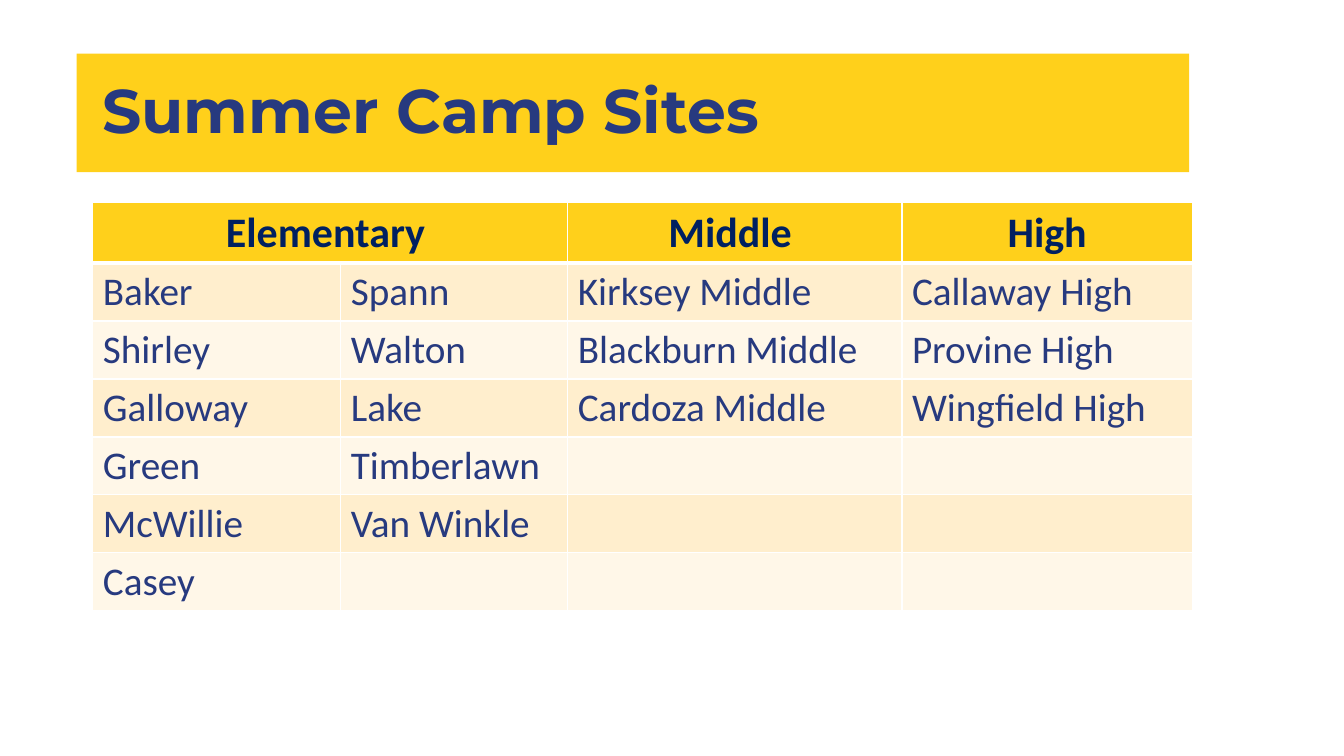
from dataclasses import dataclass

from lxml.etree import SubElement
from pptx import Presentation
from pptx.dml.color import RGBColor
from pptx.enum.shapes import MSO_SHAPE
from pptx.enum.text import MSO_ANCHOR, PP_ALIGN
from pptx.oxml.ns import qn
from pptx.slide import Slide
from pptx.table import _Cell
from pptx.util import Cm, Pt

YELLOW = RGBColor(0xFF, 0xD0, 0x1B)
BLUE = RGBColor(0x27, 0x3A, 0x7F)
NAVY = RGBColor(0x00, 0x20, 0x60)
CREAM = RGBColor(0xFF, 0xEE, 0xCD)
IVORY = RGBColor(0xFF, 0xF7, 0xE8)
WHITE = RGBColor(0xFF, 0xFF, 0xFF)

COLUMN_WIDTHS = (6.25, 5.72, 8.42, 7.32)
ROWS = (
    ("Elementary ", "", "Middle ", "High"),
    ("Baker", "Spann", "Kirksey Middle", "Callaway High"),
    ("Shirley", "Walton", "Blackburn Middle", "Provine High"),
    ("Galloway", "Lake", "Cardoza Middle", "Wingfield High"),
    ("Green", "Timberlawn", "", ""),
    ("McWillie", "Van Winkle", "", ""),
    ("Casey", "", "", ""),
)


@dataclass(frozen=True)
class RowStyle:
    fill: RGBColor
    color: RGBColor = BLUE
    size: int = 28
    bold: bool = False
    align: PP_ALIGN = PP_ALIGN.LEFT
    height: float = 1.46


HEADER = RowStyle(YELLOW, NAVY, 30, True, PP_ALIGN.CENTER, 1.54)
BANDS = (RowStyle(CREAM), RowStyle(IVORY))


def row_style(index: int) -> RowStyle:
    return BANDS[(index - 1) % 2] if index else HEADER


def add_borders(cell: _Cell, top: float, bottom: float) -> None:
    tc_pr = cell._tc.get_or_add_tcPr()
    for side, width in (("L", 1), ("R", 1), ("T", top), ("B", bottom)):
        ln = SubElement(tc_pr, qn(f"a:ln{side}"), w=str(Pt(width)))
        fill = SubElement(ln, qn("a:solidFill"))
        SubElement(fill, qn("a:srgbClr"), val=str(WHITE))


def fill_cell(cell: _Cell, text: str, style: RowStyle) -> None:
    cell.fill.solid()
    cell.fill.fore_color.rgb = style.fill
    p = cell.text_frame.paragraphs[0]
    p.text = text
    p.alignment = style.align
    p.font.name = "Calibri"
    p.font.size = Pt(style.size)
    p.font.bold = style.bold
    p.font.color.rgb = style.color


def add_title(s: Slide) -> None:
    bar = s.shapes.add_shape(MSO_SHAPE.RECTANGLE, Cm(1.93), Cm(1.35), Cm(28.04), Cm(2.99))
    bar.shadow.inherit = False
    bar.fill.solid()
    bar.fill.fore_color.rgb = YELLOW
    bar.line.fill.background()

    tf = s.shapes.add_textbox(Cm(2.33), Cm(1.02), Cm(27.71), Cm(3.68)).text_frame
    tf.word_wrap = True
    tf.vertical_anchor = MSO_ANCHOR.MIDDLE
    p = tf.paragraphs[0]
    p.text = "Summer Camp Sites"
    p.line_spacing = 0.9
    p.font.name = "Montserrat"
    p.font.size = Pt(44)
    p.font.bold = True
    p.font.color.rgb = BLUE


def add_sites(s: Slide) -> None:
    heights = [row_style(i).height for i in range(len(ROWS))]
    table = s.shapes.add_table(
        len(ROWS), len(COLUMN_WIDTHS), Cm(2.34), Cm(5.09),
        Cm(sum(COLUMN_WIDTHS)), Cm(sum(heights)),
    ).table
    for column, width in zip(table.columns, COLUMN_WIDTHS):
        column.width = Cm(width)
    for i, texts in enumerate(ROWS):
        table.rows[i].height = Cm(heights[i])
        for j, text in enumerate(texts):
            cell = table.cell(i, j)
            add_borders(cell, top=3 if i == 1 else 1, bottom=1 if i else 3)
            fill_cell(cell, text, row_style(i))
    table.cell(0, 0).merge(table.cell(0, 1))


def main() -> None:
    prs = Presentation()
    prs.slide_width = Cm(33.87)
    prs.slide_height = Cm(19.05)
    s = prs.slides.add_slide(prs.slide_layouts[6])
    add_title(s)
    add_sites(s)
    prs.save("out.pptx")


if __name__ == "__main__":
    main()
